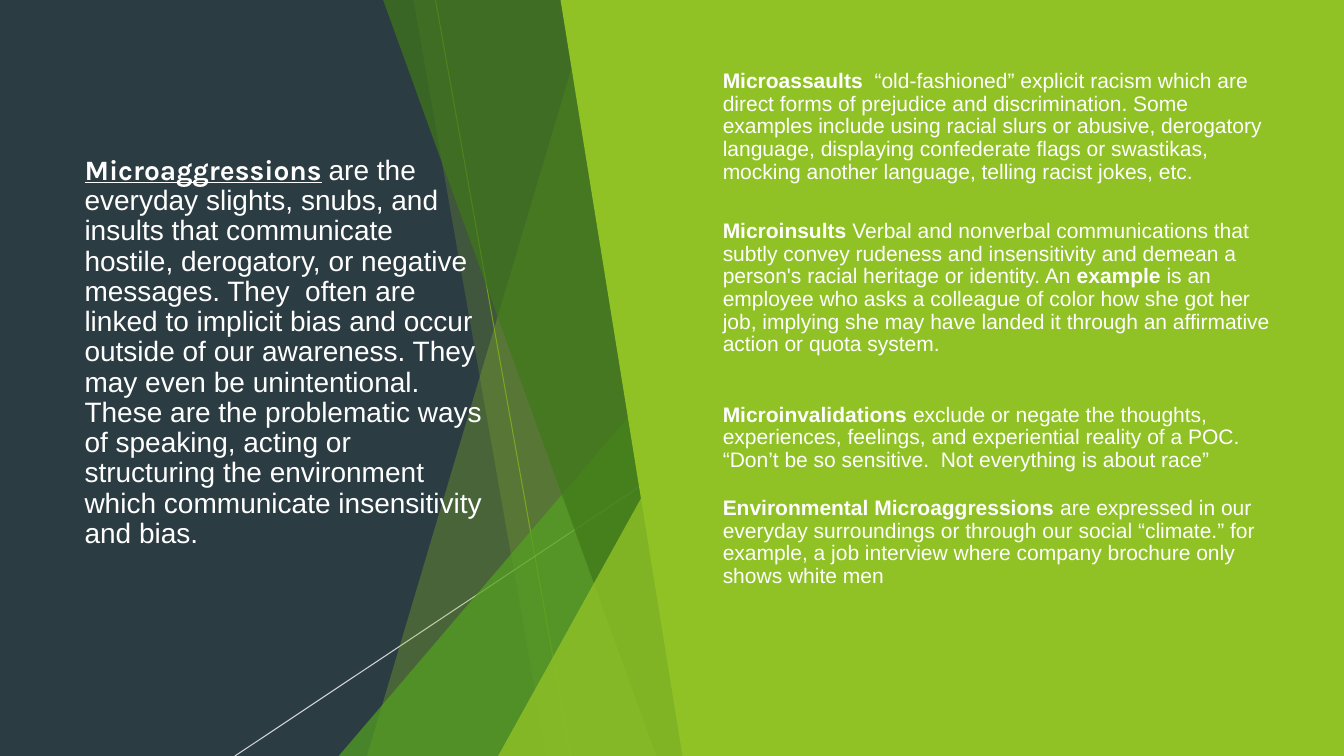
"""Build a slide defining microaggressions and their four forms."""
from dataclasses import dataclass

from lxml.etree import SubElement
from pptx import Presentation
from pptx.dml.color import RGBColor
from pptx.enum.shapes import MSO_CONNECTOR, MSO_SHAPE
from pptx.enum.text import MSO_ANCHOR
from pptx.oxml.ns import qn
from pptx.util import Inches, Pt


@dataclass(frozen=True)
class Theme:
    slate: str = "2C3C43"
    lime: str = "90C226"
    olive: str = "6C921D"
    leaf: str = "54A021"
    forest: str = "3F7819"
    white: str = "FFFFFF"
    font: str = "Arial"
    accent_font: str = "Karla"
    title_size: int = 20
    body_size: int = 15


theme = Theme()


def paint(fill, color, alpha=100):
    fill.solid()
    fill.fore_color.rgb = RGBColor.from_string(color)
    if alpha < 100:
        clr = fill._xPr.find(".//" + qn("a:srgbClr"))
        SubElement(clr, qn("a:alpha"), val=str(alpha * 1000))


def add_run(p, text, *, size, font=theme.font, bold=False, underline=False):
    r = p.add_run()
    r.text = text
    r.font.name = font
    r.font.size = Pt(size)
    r.font.bold = bold
    r.font.underline = underline
    r.font.color.rgb = RGBColor.from_string(theme.white)


prs = Presentation()
prs.slide_width = Inches(13.33)
prs.slide_height = Inches(7.5)
s = prs.slides.add_slide(prs.slide_layouts[6])
paint(s.background.fill, theme.slate)

rays = [
    ((4.32, 0), (5.66, 7.5), theme.olive, 100),
    ((7.54, 4.03), (2.33, 7.5), theme.white, 80),
]
for start, end, color, alpha in rays:
    ends = [Inches(v) for v in start + end]
    line = s.shapes.add_connector(MSO_CONNECTOR.STRAIGHT, *ends)
    line.line.width = Pt(0.75)
    paint(line.line.fill, color, alpha)
    SubElement(line._element.spPr, qn("a:effectLst"))

edge = 6.92
shards = [
    ("band", (5.87, 3.64), theme.lime, 30),
    ("band", (4.1, 5.42), theme.lime, 20),
    ("triangle", (3.36, 3.33), theme.leaf, 72),
    ("band", (3.8, 6.51), theme.forest, 70),
    ("triangle", (4.94, 3.93), theme.lime, 80),
    ("panel", (5.56, 6.77), theme.lime, 100),
]
for kind, (a, b), color, alpha in shards:
    if kind == "triangle":
        sp = s.shapes.add_shape(MSO_SHAPE.ISOSCELES_TRIANGLE, Inches(a), Inches(b),
                                Inches(edge - a), Inches(7.5 - b))
        sp.adjustments[0] = 1
    else:
        right = Inches(13.33 if kind == "panel" else edge)
        outline = s.shapes.build_freeform(Inches(a), 0, scale=1.0)
        outline.add_line_segments([(right, 0), (right, Inches(7.5)), (Inches(b), Inches(7.5))])
        sp = outline.convert_to_shape()
    sp.shadow.inherit = False
    sp.line.fill.background()
    paint(sp.fill, color, alpha)

title = [
    ("Microaggressions", {"font": theme.accent_font, "bold": True, "underline": True}),
    (" ", {"font": theme.accent_font}),
    ("are the everyday slights, snubs, and insults that communicate hostile, derogatory, "
     "or negative messages. They  often are linked to implicit bias and occur outside of "
     "our awareness. They may even be unintentional. These are the problematic ways of "
     "speaking, acting or structuring the environment which communicate insensitivity "
     "and bias.", {}),
]
bold = {"bold": True}
forms = [
    [("Microassaults  ", bold),
     ("“old-fashioned” explicit racism which are direct forms of prejudice and "
      "discrimination. Some examples include using racial slurs or abusive, derogatory "
      "language, displaying confederate flags or swastikas, mocking another language, "
      "telling racist jokes, etc.", {})],
    [("Microinsults ", bold),
     ("Verbal and nonverbal communications that subtly convey rudeness and insensitivity "
      "and demean a person's racial heritage or identity. An ", {}),
     ("example", bold),
     (" is an employee who asks a colleague of color how she got her job, implying she "
      "may have landed it through an affirmative action or quota system.", {})],
    [("Microinvalidations ", bold),
     ("exclude or negate the thoughts, experiences, feelings, and experiential reality "
      "of a POC. “Don’t be so sensitive.  Not everything is about race”", {})],
    [("Environmental Microaggressions ", bold),
     ("are expressed in our everyday surroundings or through our social “climate.” for "
      "example, a job interview where company brochure only shows white men", {})],
]
blocks = [
    ((0.74, 0.67, 4.2, 5.66), MSO_ANCHOR.MIDDLE, theme.title_size, [title], [0]),
    ((7.07, 0.65, 5.65, 5.66), MSO_ANCHOR.TOP, theme.body_size, forms, [0, 26, 34, 18]),
]
for box, anchor, size, paragraphs, gaps in blocks:
    tf = s.shapes.add_textbox(*[Inches(v) for v in box]).text_frame
    tf.word_wrap = True
    tf.vertical_anchor = anchor
    for i, (runs, gap) in enumerate(zip(paragraphs, gaps)):
        p = tf.add_paragraph() if i else tf.paragraphs[0]
        p.line_spacing = 0.9
        p.space_before = Pt(gap)
        for text, style in runs:
            add_run(p, text, size=size, **style)

prs.save("out.pptx")
